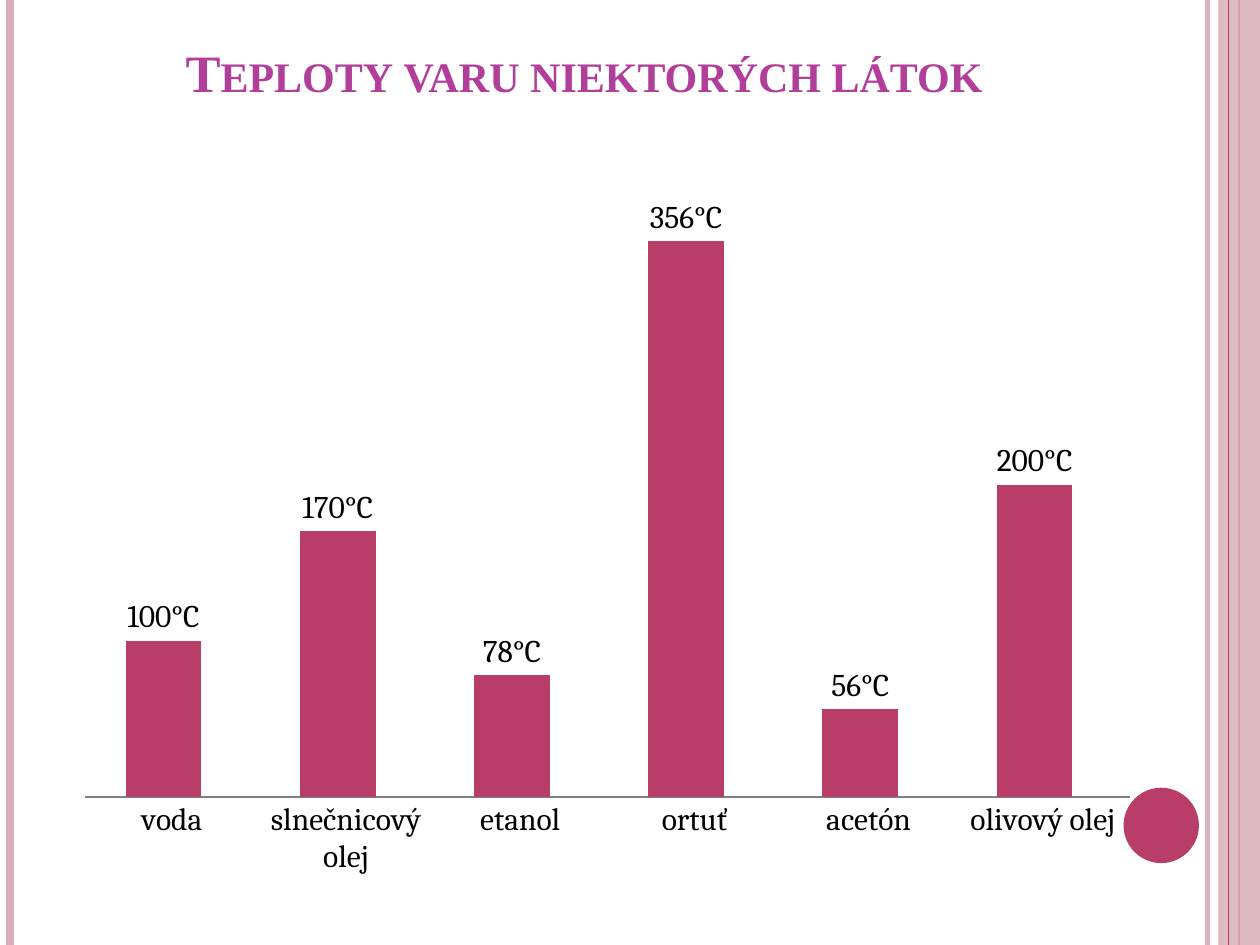
from lxml.etree import SubElement
from pptx import Presentation
from pptx.chart.data import CategoryChartData as ChartData
from pptx.dml.color import RGBColor as Rgb
from pptx.enum.chart import XL_CHART_TYPE as ChartType
from pptx.enum.chart import XL_LABEL_POSITION as LabelPosition
from pptx.enum.chart import XL_TICK_LABEL_POSITION as TickLabels
from pptx.enum.chart import XL_TICK_MARK as TickMark
from pptx.enum.shapes import MSO_CONNECTOR as Connector
from pptx.enum.shapes import MSO_SHAPE as Preset
from pptx.enum.text import MSO_ANCHOR as Anchor
from pptx.enum.text import MSO_AUTO_SIZE as AutoSize
from pptx.enum.text import PP_ALIGN as Align
from pptx.oxml import parse_xml
from pptx.oxml.ns import nsdecls, qn
from pptx.util import Cm, Pt

COLORS = {
    "rose": "B83D68",
    "pale": "D8AFB9",
    "title": "B13F9A",
    "violet": "AC66BB",
    "orange": "DE6C36",
    "text": "000000",
    "axis": "808080",
}
PAGE_WIDTH, PAGE_HEIGHT = 25.4, 19.05

BOILING_POINTS = {
    "voda": 100,
    "slnečnicový olej": 170,
    "etanol": 78,
    "ortuť": 356,
    "acetón": 56,
    "olivový olej": 200,
}


class PageBuilder:
    title_font = "Times New Roman"
    chart_font = "Cambria"

    def __init__(self, deck):
        self.page = deck.slides.add_slide(deck.slide_layouts[5])

    def color(self, name):
        return Rgb.from_string(COLORS[name])

    def set_opacity(self, element, percent):
        color = next(element.iter(qn("a:srgbClr")))
        SubElement(color, qn("a:alpha")).set("val", str(percent * 1000))

    def stripe(self, x, color, width, opacity=100):
        line = self.page.shapes.add_connector(
            Connector.STRAIGHT, Cm(x), Cm(0), Cm(x), Cm(PAGE_HEIGHT))
        line.line.color.rgb = self.color(color)
        line.line.width = Pt(width)
        if opacity < 100:
            self.set_opacity(line.line._get_or_add_ln(), opacity)
        SubElement(line._element.spPr, qn("a:effectLst"))

    def shape(self, preset, x, y, width, height, color, opacity=100):
        box = self.page.shapes.add_shape(
            preset, Cm(x), Cm(y), Cm(width), Cm(height))
        box.shadow.inherit = False
        box.fill.solid()
        box.fill.fore_color.rgb = self.color(color)
        box.line.fill.background()
        if opacity < 100:
            self.set_opacity(box._element.spPr, opacity)

    def title(self, text, x, y, width, height):
        box = self.page.shapes.title
        box.left, box.top, box.width, box.height = map(Cm, (x, y, width, height))
        frame = box.text_frame
        frame.word_wrap = True
        frame.auto_size = AutoSize.NONE
        frame.vertical_anchor = Anchor.BOTTOM
        para = frame.paragraphs[0]
        para.alignment = Align.CENTER
        span = para.add_run()
        span.text = text
        span.font.name = self.title_font
        span.font.size = Pt(30)
        span.font.bold = True
        span.font.color.rgb = self.color("title")
        span.font._element.set("cap", "small")

    def column_chart(self, points, x, y, width, height):
        data = ChartData()
        data.categories = list(points)
        data.add_series("Series 1", list(points.values()))
        for name in ("Series 2", "Series 3"):
            data.add_series(name, [None] * len(points))
        chart = self.page.shapes.add_chart(
            ChartType.COLUMN_CLUSTERED,
            Cm(x), Cm(y), Cm(width), Cm(height), data).chart
        chart.has_legend = False
        chart.has_title = False
        chart.font.name = self.chart_font
        chart.font.size = Pt(18)
        chart.font.color.rgb = self.color("text")

        # Columns and their labels
        plot = chart.plots[0]
        plot.gap_width = 108
        plot.overlap = 89
        plot.vary_by_categories = False
        for series, color in zip(plot.series, ("rose", "violet", "orange")):
            series.format.fill.solid()
            series.format.fill.fore_color.rgb = self.color(color)
            labels = series.data_labels
            labels.show_value = True
            labels.position = LabelPosition.OUTSIDE_END
            labels.number_format = '0"°C"'
            labels.number_format_is_linked = False

        # Axes
        names = chart.category_axis
        names.major_tick_mark = names.minor_tick_mark = TickMark.NONE
        names.tick_label_position = TickLabels.NEXT_TO_AXIS
        names.format.line.color.rgb = self.color("axis")
        names.format.line.width = Pt(1)
        values = chart.value_axis
        values.minimum_scale, values.maximum_scale = 0, 400
        values.has_major_gridlines = False
        values.visible = False

        # Fixed place of the plot within the chart
        area = chart._chartSpace.chart.plotArea
        for old in area.findall(qn("c:layout")):
            area.remove(old)
        area.insert(0, parse_xml(
            f'<c:layout {nsdecls("c")}><c:manualLayout>'
            '<c:layoutTarget val="inner"/>'
            '<c:xMode val="edge"/><c:yMode val="edge"/>'
            '<c:x val="0.02"/><c:y val="0.02"/>'
            '<c:w val="0.96"/><c:h val="0.85"/>'
            '</c:manualLayout></c:layout>'))


def main():
    deck = Presentation()
    deck.slide_width, deck.slide_height = Cm(PAGE_WIDTH), Cm(PAGE_HEIGHT)
    builder = PageBuilder(deck)

    # Side decoration
    builder.stripe(24.34, "pale", 3, opacity=93)
    builder.stripe(0.21, "pale", 4.5)
    builder.stripe(24.98, "rose", 1.5)
    builder.shape(Preset.RECTANGLE, 24.56, 0, 0.84, PAGE_HEIGHT, "pale", opacity=87)
    builder.stripe(24.76, "rose", 0.75)
    builder.shape(Preset.OVAL, 22.65, 15.88, 1.52, 1.52, "rose")

    # Content
    builder.title("Teploty varu niektorých látok", 1.4, 0.58, 20.75, 1.63)
    builder.column_chart(BOILING_POINTS, 1.27, 3.18, 21.95, 14.81)

    deck.save("out.pptx")


if __name__ == "__main__":
    main()
